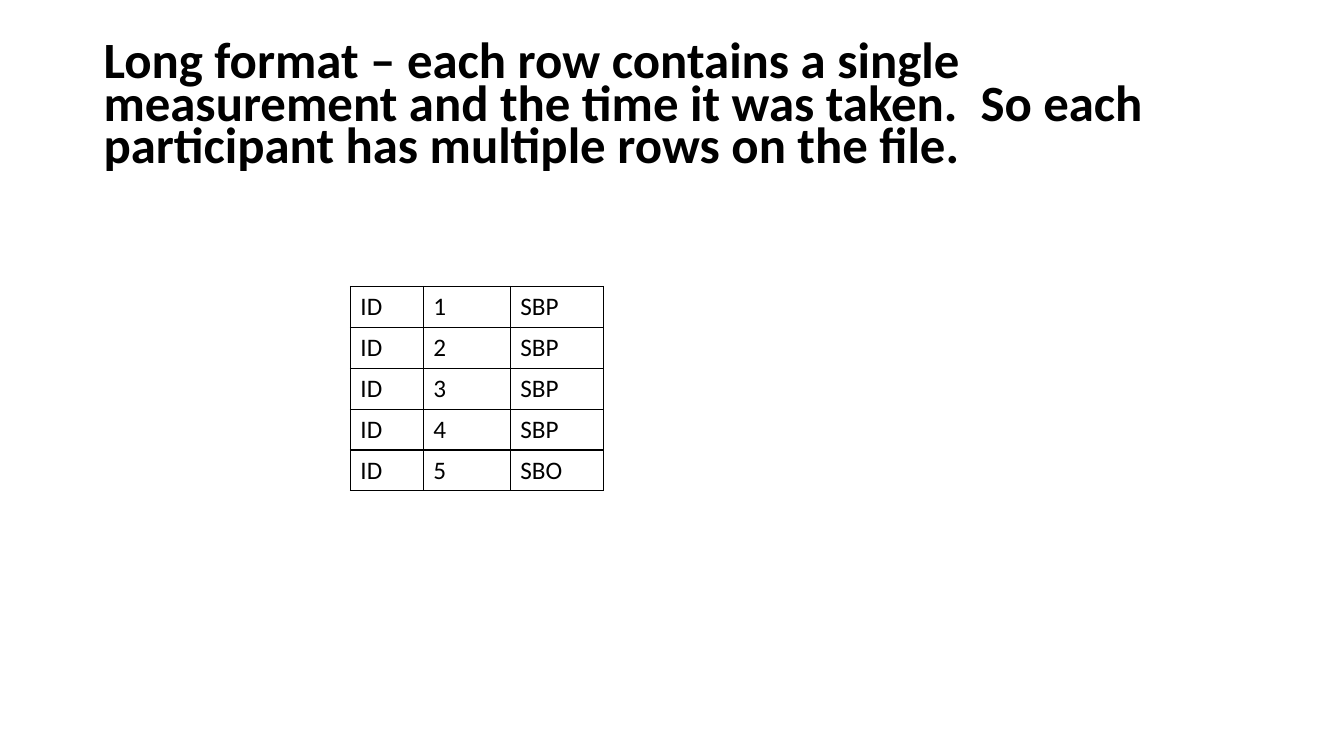
from dataclasses import dataclass

from lxml.etree import SubElement
from pptx import Presentation
from pptx.dml.color import RGBColor
from pptx.enum.text import MSO_ANCHOR
from pptx.oxml.ns import qn
from pptx.util import Cm, Pt


@dataclass(frozen=True)
class Theme:
    font: str = "Calibri"
    ink: str = "000000"
    title_size: float = 36.3
    cell_size: float = 18
    border_width: float = 1


THEME = Theme()
HEADING = (
    "Long format – each row contains a single measurement and the time it was taken.  "
    "So each participant has multiple rows on the file."
)
MEASURES = ["SBP", "SBP", "SBP", "SBP", "SBO"]
MEASUREMENTS = [("ID", str(time), measure) for time, measure in enumerate(MEASURES, 1)]


def add_run(paragraph, text, size, bold=False):
    run = paragraph.add_run()
    run.text = text
    run.font.name = THEME.font
    run.font.size = Pt(size)
    run.font.bold = bold
    run.font.color.rgb = RGBColor.from_string(THEME.ink)


def outline_cell(cell):
    properties = cell._tc.get_or_add_tcPr()
    for side in ("a:lnL", "a:lnR", "a:lnT", "a:lnB"):
        border = SubElement(properties, qn(side), w=str(Pt(THEME.border_width)))
        fill = SubElement(border, qn("a:solidFill"))
        SubElement(fill, qn("a:srgbClr"), val=THEME.ink)


def add_heading(slide, left, top, width, height):
    heading = slide.shapes.add_textbox(Cm(left), Cm(top), Cm(width), Cm(height)).text_frame
    heading.word_wrap = True
    heading.vertical_anchor = MSO_ANCHOR.MIDDLE
    sentence = heading.paragraphs[0]
    sentence.line_spacing = 0.7
    add_run(sentence, HEADING, THEME.title_size, bold=True)


def add_measurements(slide, left, top, column_widths, row_height):
    measurements = slide.shapes.add_table(
        len(MEASUREMENTS), len(column_widths), Cm(left), Cm(top),
        Cm(sum(column_widths)), Cm(row_height * len(MEASUREMENTS)),
    ).table
    measurements.first_row = False
    measurements.horz_banding = False
    for column, width in zip(measurements.columns, column_widths):
        column.width = Cm(width)
    for row, record in zip(measurements.rows, MEASUREMENTS):
        row.height = Cm(row_height)
        for cell, entry in zip(row.cells, record):
            outline_cell(cell)
            cell.fill.background()
            add_run(cell.text_frame.paragraphs[0], entry, THEME.cell_size)


def main():
    deck = Presentation()
    deck.slide_width, deck.slide_height = Cm(33.87), Cm(19.05)
    slide = deck.slides.add_slide(deck.slide_layouts[6])
    add_heading(slide, 2.36, 0.89, 29.21, 3.68)
    add_measurements(slide, 8.83, 7.22, (1.84, 2.19, 2.34), 1.03)
    deck.save("out.pptx")


if __name__ == "__main__":
    main()
